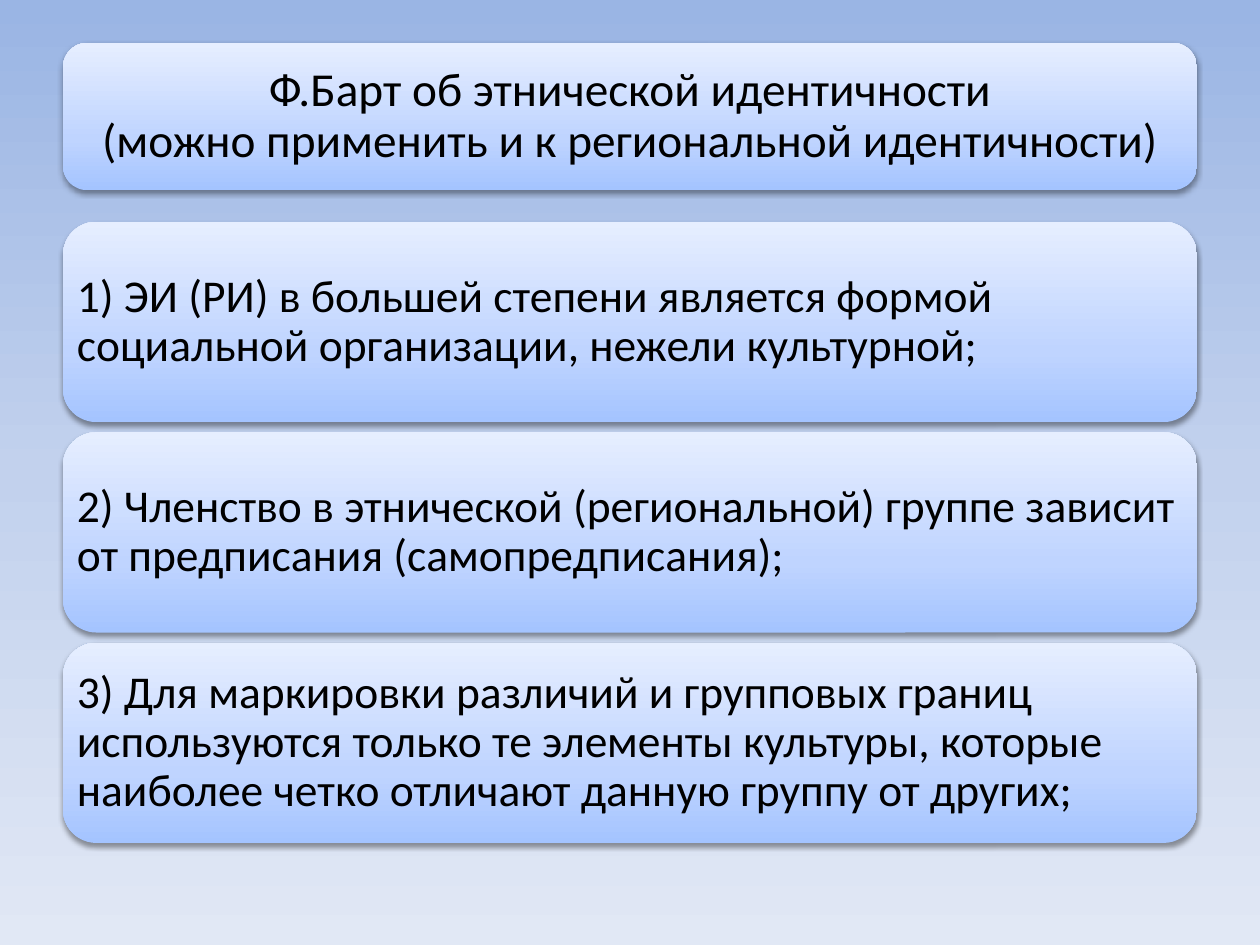
from lxml.etree import SubElement
from pptx import Presentation
from pptx.dml.color import RGBColor
from pptx.enum.shapes import MSO_SHAPE
from pptx.enum.text import MSO_ANCHOR, PP_ALIGN
from pptx.oxml.ns import qn
from pptx.util import Inches, Pt

TITLE = "Ф.Барт об этнической идентичности\n(можно применить и к региональной идентичности)"
POINTS = [
    "1) ЭИ (РИ) в большей степени является формой социальной организации, нежели культурной;",
    "2) Членство в этнической (региональной) группе зависит от предписания (самопредписания);",
    "3) Для маркировки различий и групповых границ используются только те элементы культуры, "
    "которые наиболее четко отличают данную группу от других;",
]
BACK = [(0, "9AB5E4"), (50, "C2D1ED"), (100, "E1E8F5")]
PANEL = [(0, "A4C4FF"), (35, "BFD4FF"), (100, "E6EEFF")]

LEFT, WIDTH = 0.5, 9
TOP, HIGH, STEP = 1.76, 1.59, 1.67
PAD = 0.11
CORNER = 0.1667 * 0.29  # share of the height that a round corner adds to the inset


def node(parent, tag, **attrs):
    return SubElement(parent, qn(tag), {k: str(v) for k, v in attrs.items()})


def shade(fill, root, stops, angle):
    """Fill with a gradient; the angle runs clockwise in degrees."""
    fill.gradient()
    grad = root.find(".//" + qn("a:gradFill"))
    for child in list(grad):
        grad.remove(child)
    items = node(grad, "a:gsLst")
    for pos, color in stops:
        node(node(items, "a:gs", pos=pos * 1000), "a:srgbClr", val=color)
    node(grad, "a:lin", ang=angle * 60000, scaled=0)


def drop(shape):
    """Give the shape a soft shadow straight below it."""
    shape.shadow.inherit = False
    effects = shape.element.spPr.find(qn("a:effectLst"))
    outer = node(effects, "a:outerShdw", blurRad=Pt(3.1), dist=Pt(1.6),
                 dir=90 * 60000, rotWithShape=0)
    node(node(outer, "a:srgbClr", val="000000"), "a:alpha", val=38000)


def write(shape, text, size=26, align=PP_ALIGN.LEFT, color="000000", pad=PAD):
    frame = shape.text_frame
    frame.word_wrap = True
    frame.vertical_anchor = MSO_ANCHOR.MIDDLE
    frame.margin_left = frame.margin_right = Inches(pad)
    frame.margin_top = frame.margin_bottom = Inches(pad)
    para = frame.paragraphs[0]
    para.text = text
    para.alignment = align
    para.line_spacing = 0.9
    for run in para.runs:
        run.font.name = "Calibri"
        run.font.size = Pt(size)
        run.font.color.rgb = RGBColor.from_string(color)


def panel(slide, text, top, high, **style):
    box = slide.shapes.add_shape(MSO_SHAPE.ROUNDED_RECTANGLE, Inches(LEFT),
                                 Inches(top), Inches(WIDTH), Inches(high))
    shade(box.fill, box.element.spPr, PANEL, 270)
    box.line.fill.background()
    drop(box)
    write(box, text, pad=PAD - CORNER * high, **style)


def main():
    deck = Presentation()
    deck.slide_width, deck.slide_height = Inches(10), Inches(7.5)
    slide = deck.slides.add_slide(deck.slide_layouts[6])
    shade(slide.background.fill, slide.element, BACK, 90)
    panel(slide, TITLE, 0.34, 1.17, size=27, align=PP_ALIGN.CENTER)
    for i, text in enumerate(POINTS):
        panel(slide, text, TOP + i * STEP, HIGH)
    deck.save("out.pptx")


if __name__ == "__main__":
    main()
